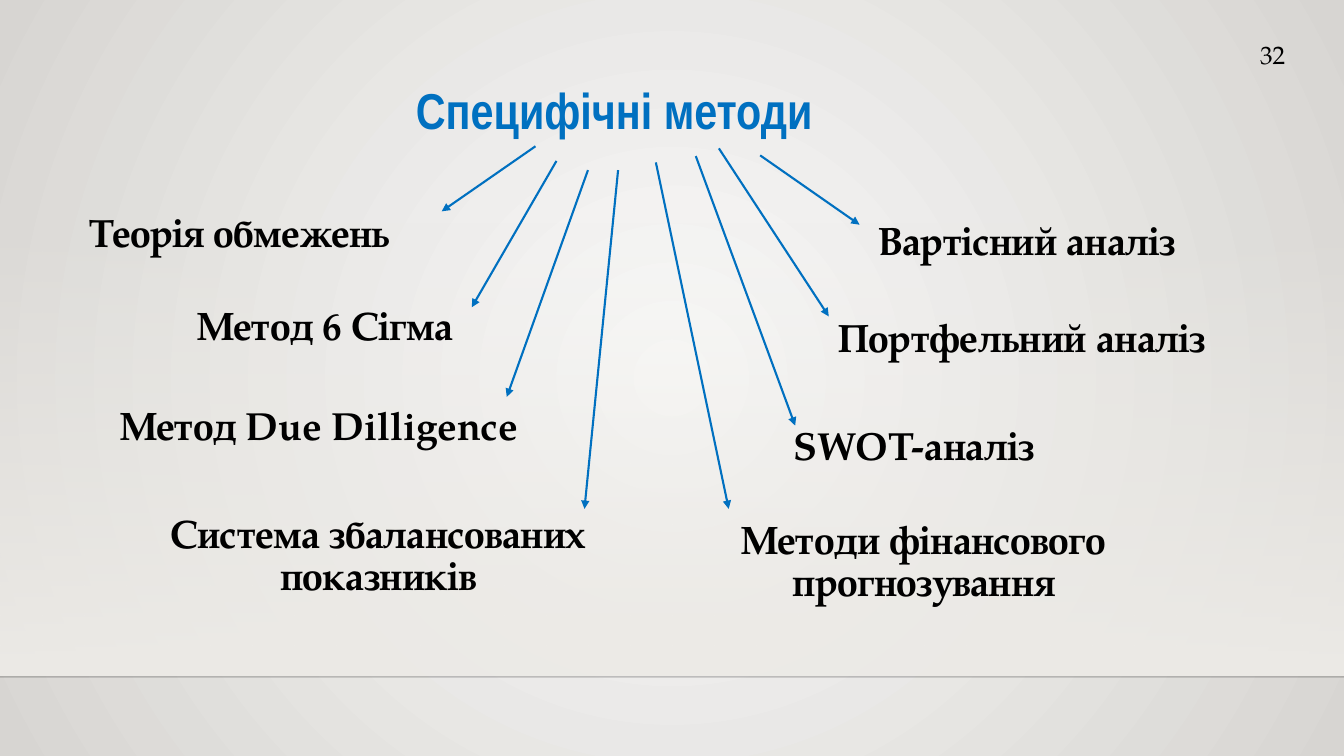
from collections import namedtuple
from dataclasses import dataclass

import lxml.etree
import pptx
import pptx.dml.color
import pptx.enum.shapes
import pptx.enum.text
import pptx.oxml.ns
import pptx.util

Pt = pptx.util.Pt
qn = pptx.oxml.ns.qn
ALIGN = pptx.enum.text.PP_ALIGN
Box = namedtuple("Box", "left top width height")
Method = namedtuple("Method", "name box align arrow_from arrow_to")


@dataclass(frozen=True)
class Theme:
    accent: str = "0070C0"
    ink: str = "000000"
    rule: str = "000001"
    center: str = "FAFAF9"
    edge: str = "D7D5D2"
    floor: str = "EDEBE7"
    heading_font: str = "Arial Narrow"
    body_font: str = "TeX Gyre Pagella"
    heading_size: float = 36
    method_size: float = 28
    number_size: float = 18


THEME = Theme()

# Boxes and arrow ends are offsets in points from the diagram's corner.
METHODS = [
    Method("Теорія обмежень", Box(0, 92, 268, 41), ALIGN.LEFT, (325.5, 51.5), (258.5, 98)),
    Method("Метод 6 Сігма", Box(77, 159, 215, 41), ALIGN.LEFT, (340.5, 62), (280, 166.5)),
    Method("Метод Due Dilligence", Box(22, 230, 315, 41), ALIGN.LEFT, (363, 68.5), (305, 230.5)),
    Method("Система збалансованих показників", Box(28, 311.5, 370, 68), ALIGN.CENTER,
           (384.5, 68.5), (360.5, 310.5)),
    Method("Методи фінансового прогнозування", Box(375, 315.5, 456, 68), ALIGN.CENTER,
           (411.5, 63), (463.5, 310.5)),
    Method("SWOT-аналіз", Box(503, 244.5, 199, 41), ALIGN.LEFT, (440, 58.5), (511, 251)),
    Method("Портфельний аналіз", Box(535, 167.5, 310, 41), ALIGN.LEFT, (456.5, 53), (535, 173)),
    Method("Вартісний аналіз", Box(563.5, 98, 256, 41), ALIGN.LEFT, (486, 58), (557, 107.5)),
]


def rgb(value):
    return pptx.dml.color.RGBColor.from_string(value)


def inside(outer, box):
    """Shift a box given relative to outer onto the slide."""
    return Box(outer.left + box.left, outer.top + box.top, box.width, box.height)


def add_text(slide, box, text, *, font=THEME.body_font, size=THEME.method_size,
             color=THEME.ink, bold=True, align=ALIGN.LEFT, spacing=None):
    frame = slide.shapes.add_textbox(*map(Pt, box)).text_frame
    frame.word_wrap = True
    paragraph = frame.paragraphs[0]
    paragraph.alignment = align
    paragraph.line_spacing = spacing
    run = paragraph.add_run()
    run.text = text
    run.font.name = font
    run.font.size = Pt(size)
    run.font.bold = bold
    run.font.color.rgb = rgb(color)


def add_line(slide, start, end, color, width):
    line = slide.shapes.add_connector(
        pptx.enum.shapes.MSO_CONNECTOR.STRAIGHT, *map(Pt, (*start, *end)))
    line.line.color.rgb = rgb(color)
    line.line.width = Pt(width)
    lxml.etree.SubElement(line._element.spPr, qn("a:effectLst"))
    return line


def set_alpha(color_element, percent):
    lxml.etree.SubElement(color_element, qn("a:alpha"), val=str(percent * 1000))


def set_gradient(fill, first, last):
    fill.gradient()
    for stop, color in zip(fill.gradient_stops, (first, last)):
        stop.color.rgb = rgb(color)


def draw_backdrop(slide, box):
    set_gradient(slide.background.fill, THEME.center, THEME.edge)
    gradient = slide._element.xpath("./p:cSld/p:bg//a:gradFill")[0]
    gradient.remove(gradient.find(qn("a:lin")))
    circle = lxml.etree.SubElement(gradient, qn("a:path"), path="circle")
    lxml.etree.SubElement(circle, qn("a:fillToRect"),
                          {side: "50000" for side in "ltrb"})

    haze_box = inside(box, Box(0, 158.5, box.width, 324))
    haze = slide.shapes.add_shape(
        pptx.enum.shapes.MSO_SHAPE.RECTANGLE, *map(Pt, haze_box))
    haze.shadow.inherit = False
    haze.line.fill.background()
    set_gradient(haze.fill, THEME.floor, THEME.floor)
    haze.fill.gradient_angle = 270
    set_alpha(haze._element.xpath(".//a:gs/a:srgbClr")[0], 0)

    floor_y = box.top + 483.5
    floor = add_line(slide, (box.left, floor_y), (box.left + box.width, floor_y),
                     THEME.rule, 1)
    set_alpha(floor._element.xpath(".//a:ln//a:srgbClr")[0], 20)


def draw_methods(slide, box):
    """Heading with an arrow fanning out to each method."""
    add_text(slide, inside(box, Box(233, 0, 306, 51)), "Специфічні методи",
             font=THEME.heading_font, size=THEME.heading_size, color=THEME.accent)
    for method in METHODS:
        centered = method.align == ALIGN.CENTER
        add_text(slide, inside(box, method.box), method.name, align=method.align,
                 spacing=0.89 if centered else None)
        start, end = ((box.left + x, box.top + y)
                      for x, y in (method.arrow_from, method.arrow_to))
        arrow = add_line(slide, start, end, THEME.accent, 1.5)
        lxml.etree.SubElement(arrow.line._get_or_add_ln(), qn("a:tailEnd"),
                              type="triangle")


def draw_page_number(slide, box):
    add_text(slide, box, "32", size=THEME.number_size, bold=False)


def main():
    deck = pptx.Presentation()
    deck.slide_width, deck.slide_height = Pt(960), Pt(540)
    slide = deck.slides.add_slide(deck.slide_layouts[6])
    draw_backdrop(slide, Box(0, 0, 960, 540))
    draw_methods(slide, Box(57, 53, 845, 384))
    draw_page_number(slide, Box(893, 24.5, 39, 29))
    deck.save("out.pptx")


if __name__ == "__main__":
    main()
